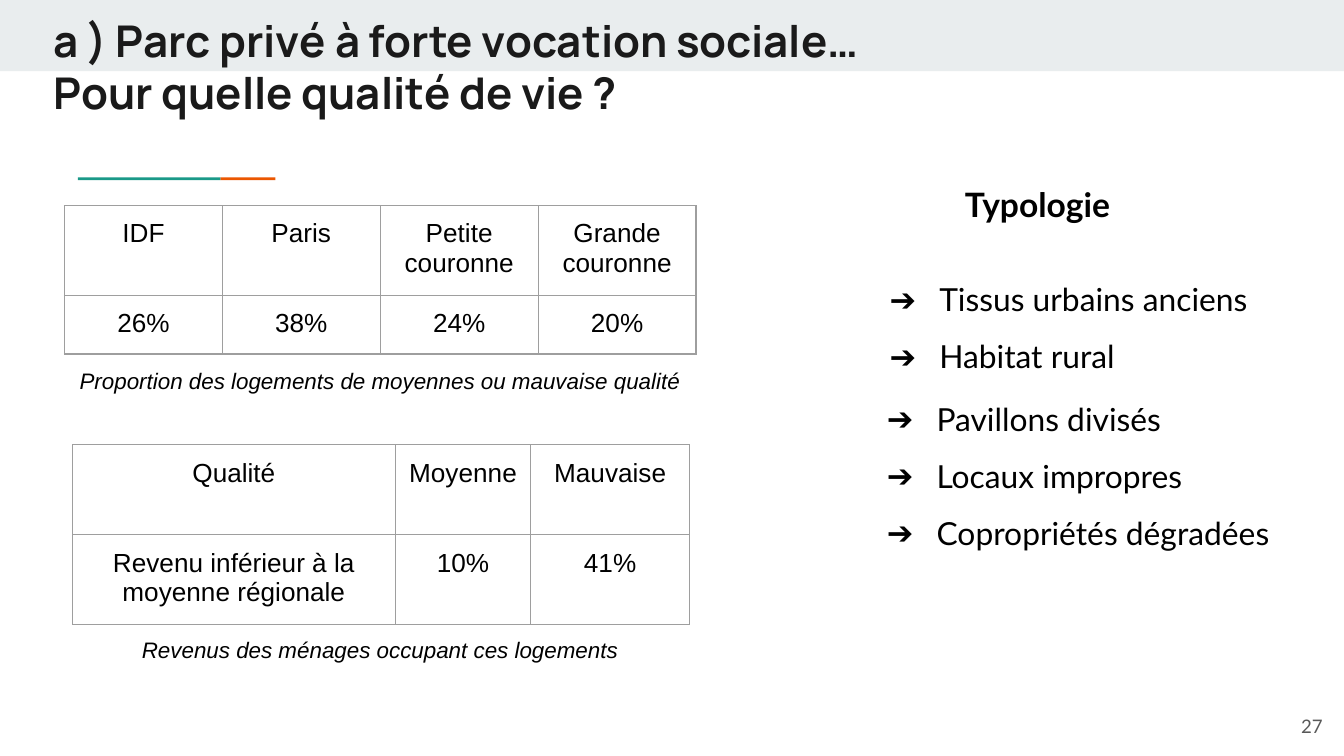
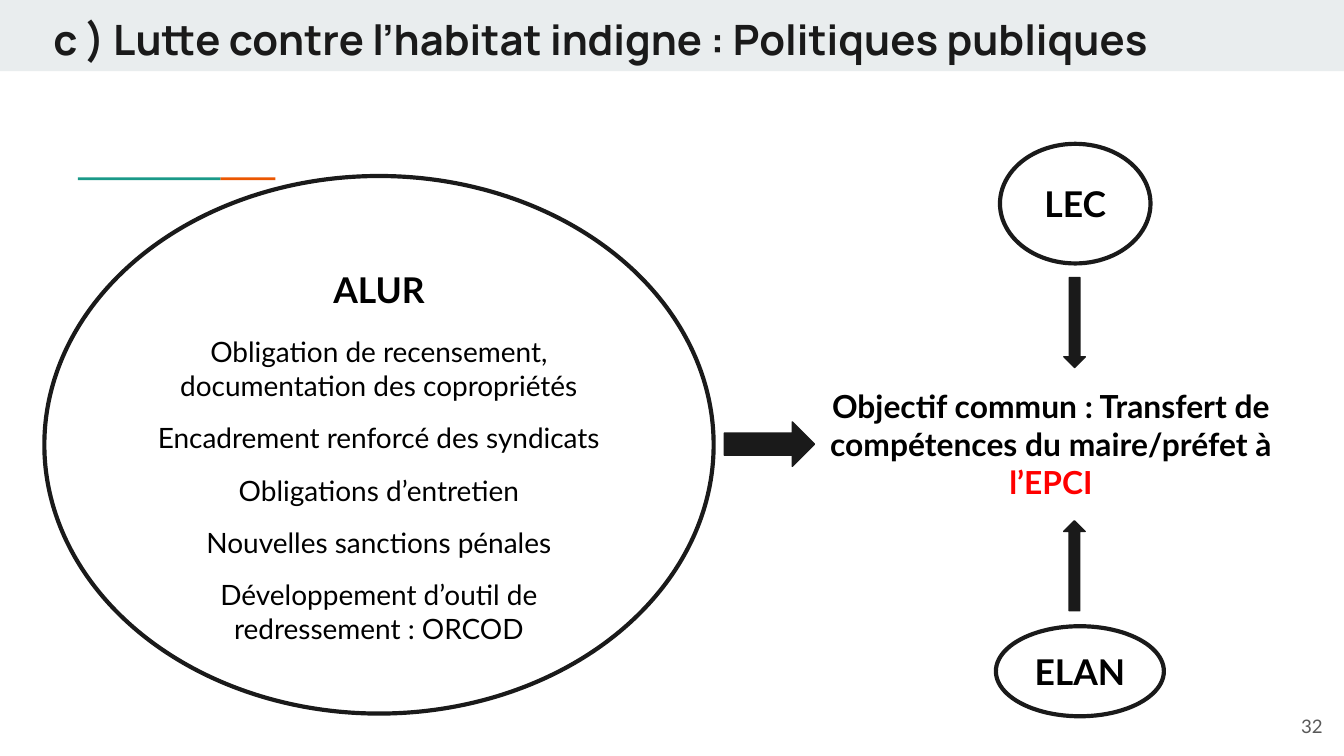
from dataclasses import dataclass

from lxml import etree
from pptx import Presentation
from pptx.dml.color import RGBColor
from pptx.enum import shapes, text
from pptx.oxml.ns import qn
from pptx.util import Inches, Pt

INK, BLACK, WHITE, RED = "1A1A1A", "000000", "FFFFFF", "FF0000"
BAND, TEAL, RUST, GREY, EDGE = "E9EDEE", "1A9988", "EB5600", "595959", "9E9E9E"
Shape, Align, Anchor = shapes.MSO_SHAPE, text.PP_ALIGN, text.MSO_ANCHOR
Box = tuple[float, float, float, float]


@dataclass
class Style:
    size: float
    font: str = "Lato"
    color: str = BLACK
    bold: bool = False
    slant: bool = False
    align: Align = Align.CENTER
    before: float = 0
    pitch: float = 1
    bullet: str = ""


@dataclass
class Oval:
    box: Box
    lines: list[tuple[str, Style]]
    anchor: Anchor = Anchor.MIDDLE


@dataclass
class Arrow:
    box: Box
    turn: int = 0


@dataclass
class Grid:
    left: float
    top: float
    cols: list[float]
    rows: list[float]
    cells: list[list[str]]


CELL = Style(14, "Arial")
NOTE = Style(12, "Arial", slant=True)
HEAD = Style(18, bold=True)
ITEM = Style(17, align=Align.LEFT, pitch=1.5, bullet="➔")
LAW = Style(19, bold=True)
LEAD = Style(15, before=13)
RULE = Style(15, before=10)
GOAL = Style(17, bold=True)
PAGE = Style(10, color=GREY, align=Align.RIGHT)


def rgb(code: str) -> RGBColor:
    return RGBColor.from_string(code)


def inches(box: Box) -> list:
    return [Inches(v) for v in box]


def write(frame, lines: list[tuple[str, Style]]) -> None:
    """Fill a text frame, one paragraph for each line."""
    for n, (words, style) in enumerate(lines):
        para = frame.add_paragraph() if n else frame.paragraphs[0]
        para.add_run().text = words
        para.alignment = style.align
        para.line_spacing = style.pitch
        para.space_before = Pt(style.before)
        font = para.font
        font.name, font.size = style.font, Pt(style.size)
        font.bold, font.italic = style.bold, style.slant
        font.color.rgb = rgb(style.color)
        if style.bullet:
            add_mark(para, style)


def add_mark(para, style: Style) -> None:
    props = para._p.get_or_add_pPr()
    props.set("marL", str(Inches(0.5)))
    props.set("indent", str(Inches(-0.37)))
    tint = etree.Element(qn("a:buClr"))
    etree.SubElement(tint, qn("a:srgbClr"), val=style.color)
    size = etree.Element(qn("a:buSzPts"), val=str(style.size * 100))
    face = etree.Element(qn("a:buFont"), typeface=style.font)
    mark = etree.Element(qn("a:buChar"), char=style.bullet)
    last = props.find(qn("a:defRPr"))
    for part in (tint, size, face, mark):
        last.addprevious(part)


def set_frame(frame, anchor: Anchor) -> None:
    frame.word_wrap = True
    frame.vertical_anchor = anchor
    frame.margin_left = frame.margin_right = Inches(0.1)
    frame.margin_top = frame.margin_bottom = Inches(0.1)


def add_text(slide, box: Box, lines: list[tuple[str, Style]],
             anchor: Anchor = Anchor.TOP):
    frame = slide.shapes.add_textbox(*inches(box)).text_frame
    set_frame(frame, anchor)
    write(frame, lines)
    return frame


def add_form(slide, kind: Shape, box: Box, fill: str,
             line: str = "", width: float = 0):
    form = slide.shapes.add_shape(kind, *inches(box))
    form.shadow.inherit = False
    form.fill.solid()
    form.fill.fore_color.rgb = rgb(fill)
    if line:
        form.line.color.rgb = rgb(line)
        form.line.width = Pt(width)
    else:
        form.line.fill.background()
    return form


def add_oval(slide, oval: Oval) -> None:
    form = add_form(slide, Shape.OVAL, oval.box, WHITE, INK, 2.25)
    set_frame(form.text_frame, oval.anchor)
    write(form.text_frame, oval.lines)


def add_arrow(slide, arrow: Arrow) -> None:
    form = add_form(slide, Shape.RIGHT_ARROW, arrow.box, INK, INK, 0.75)
    form.rotation = arrow.turn


def add_edges(cell) -> None:
    props = cell._tc.get_or_add_tcPr()
    for side in ("lnL", "lnR", "lnT", "lnB"):
        line = etree.SubElement(props, qn("a:" + side), w=str(Pt(0.75)))
        fill = etree.SubElement(line, qn("a:solidFill"))
        etree.SubElement(fill, qn("a:srgbClr"), val=EDGE)


def add_grid(slide, grid: Grid) -> None:
    box = grid.left, grid.top, sum(grid.cols), sum(grid.rows)
    table = slide.shapes.add_table(
        len(grid.rows), len(grid.cols), *inches(box)).table
    table.first_row = table.horz_banding = False
    for col, width in zip(table.columns, grid.cols):
        col.width = Inches(width)
    for row, height, words in zip(table.rows, grid.rows, grid.cells):
        row.height = Inches(height)
        for cell, word in zip(row.cells, words):
            cell.margin_left = cell.margin_right = Inches(0.1)
            cell.margin_top = cell.margin_bottom = Inches(0.1)
            write(cell.text_frame, [(word, CELL)])
            add_edges(cell)
            cell.fill.background()


def add_page(deck, title: list[str], size: float, page: int):
    """Start a slide with the band, accent line, title and page number."""
    slide = deck.slides.add_slide(deck.slide_layouts[6])
    for box, fill in (((0, 0, 10, 0.53), BAND),
                      ((1.64, 1.32, 0.41, 0.02), RUST),
                      ((0.58, 1.32, 1.06, 0.02), TEAL)):
        add_form(slide, Shape.RECTANGLE, box, fill)
    style = Style(size, "Manrope", INK, True, align=Align.LEFT)
    add_text(slide, (0.3, 0, 9.6, 0.59), [(line, style) for line in title])
    add_text(slide, (9.34, 5.19, 0.6, 0.43), [(str(page), PAGE)],
             Anchor.MIDDLE)
    return slide


def add_homes(deck) -> None:
    slide = add_page(deck, ["a ) Parc privé à forte vocation sociale…",
                            "Pour quelle qualité de vie ?"], 23.4, 27)
    # Tables and their captions
    grids = [
        Grid(0.48, 1.53, [4.7 / 4] * 4, [0.67, 0.43],
             [["IDF", "Paris", "Petite couronne", "Grande couronne"],
              ["26%", "38%", "24%", "20%"]]),
        Grid(0.54, 3.31, [2.4, 1.01, 1.18], [0.67, 0.67],
             [["Qualité", "Moyenne", "Mauvaise"],
              ["Revenu inférieur à la moyenne régionale", "10%", "41%"]]),
    ]
    notes = ["Proportion des logements de moyennes ou mauvaise qualité",
             "Revenus des ménages occupant ces logements"]
    for grid, note, top in zip(grids, notes, (2.63, 4.63)):
        add_grid(slide, grid)
        add_text(slide, (0.48, top, 4.7, 0.4), [(note, NOTE)])

    # Types of housing
    add_text(slide, (6.61, 1.27, 2.22, 0.5), [("Typologie", HEAD)])
    lists = [
        ((6.39, 1.84, 3.19, 1.35), ["Tissus urbains anciens", "Habitat rural"]),
        ((6.37, 2.73, 3.19, 1.35), ["Pavillons divisés", "Locaux impropres",
                                    "Copropriétés dégradées"]),
    ]
    for box, items in lists:
        add_text(slide, box, [(item, ITEM) for item in items])


def add_laws(deck) -> None:
    slide = add_page(
        deck, ["c ) Lutte contre l’habitat indigne : Politiques publiques"],
        22.4, 32)
    # Laws
    rules = ["Encadrement renforcé des syndicats", "Obligations d’entretien",
             "Nouvelles sanctions pénales",
             "Développement d’outil de redressement : ORCOD"]
    alur = [("ALUR", LAW),
            ("Obligation de recensement, documentation des copropriétés", LEAD)]
    alur += [(rule, RULE) for rule in rules]
    for oval in (Oval((0.33, 1.31, 4.98, 4), alur, Anchor.TOP),
                 Oval((7.44, 1.07, 1.12, 0.89), [("LEC", LAW)]),
                 Oval((7.41, 4.66, 1.25, 0.67), [("ELAN", LAW)])):
        add_oval(slide, oval)

    # Shared goal
    goal = add_text(
        slide, (5.86, 2.78, 3.92, 1.06),
        [("Objectif commun : Transfert de compétences du maire/préfet à ",
          GOAL)])
    run = goal.paragraphs[0].add_run()
    run.text = "l’EPCI"
    run.font.color.rgb = rgb(RED)

    # Arrows towards the goal
    for arrow in (Arrow((5.39, 3.14, 0.67, 0.33)),
                  Arrow((7.66, 2.32, 0.67, 0.16), 90),
                  Arrow((7.66, 4.13, 0.67, 0.16), 270)):
        add_arrow(slide, arrow)


def main() -> None:
    deck = Presentation()
    deck.slide_width = Inches(10)
    deck.slide_height = deck.slide_width * 9 // 16
    add_homes(deck)
    add_laws(deck)
    deck.save("out.pptx")


if __name__ == "__main__":
    main()
